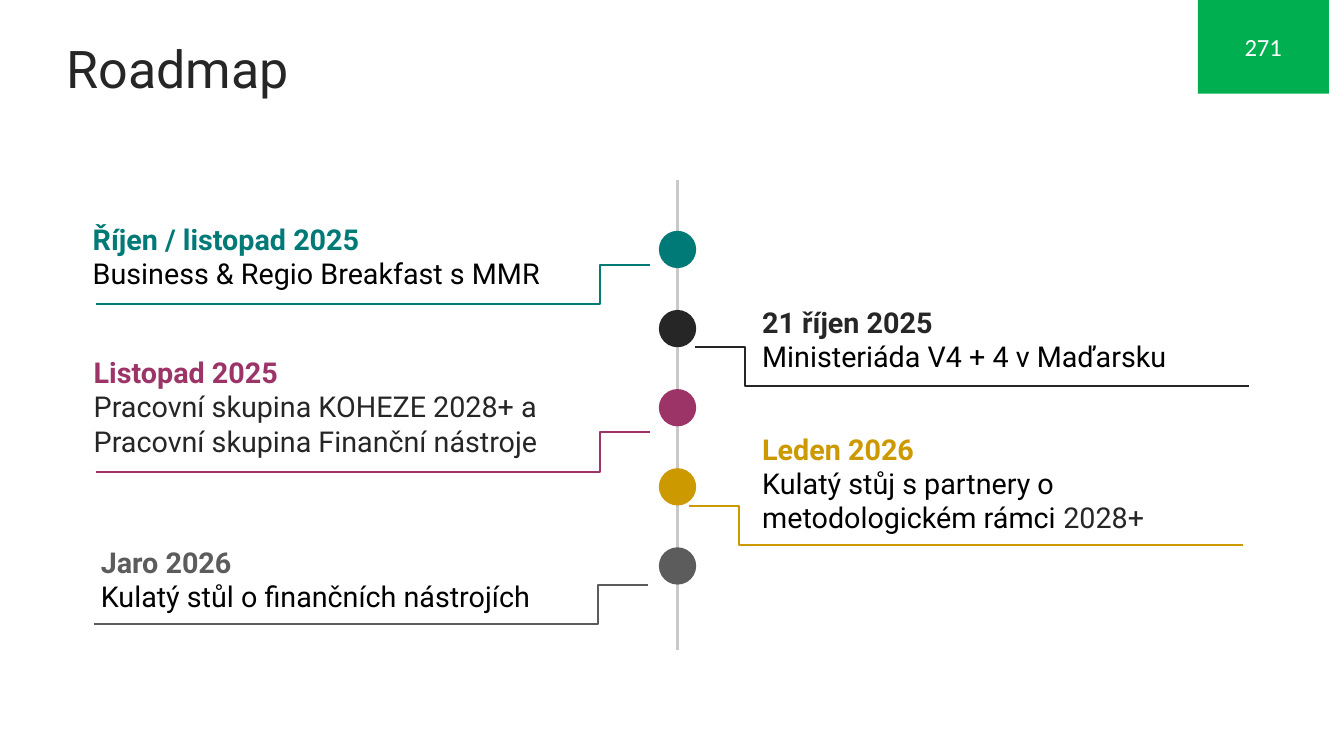
"""Build the Roadmap slide: a vertical timeline with five milestones."""
from lxml.etree import SubElement
from pptx import Presentation
from pptx.dml.color import RGBColor
from pptx.enum.shapes import MSO_CONNECTOR, MSO_SHAPE
from pptx.enum.text import MSO_ANCHOR, PP_ALIGN
from pptx.oxml.ns import qn
from pptx.util import Inches, Pt

TEAL = RGBColor(0x00, 0x7A, 0x77)
INK = RGBColor(0x26, 0x26, 0x26)
PLUM = RGBColor(0x9C, 0x34, 0x68)
GOLD = RGBColor(0xCC, 0x99, 0x00)
GRAY = RGBColor(0x5C, 0x5C, 0x5C)
SILVER = RGBColor(0xC9, 0xC9, 0xC9)
GREEN = RGBColor(0x00, 0xB0, 0x50)
BLACK = RGBColor(0, 0, 0)
WHITE = RGBColor(0xFF, 0xFF, 0xFF)

CELL = Inches(0.1)
AXIS, DOT, TOP, STEP = 67.2, 3.7, 22.9, 7.85
REACH, RISE, BEND = 55, 3.9, 90900

deck = Presentation()
deck.slide_width, deck.slide_height = Inches(13.33), Inches(7.5)
slide = deck.slides.add_slide(deck.slide_layouts[6])
shapes = slide.shapes


def grid(*cells):
    return [round(n * CELL) for n in cells]


def write(para, text, size, color, bold=False, face="Roboto"):
    run = para.add_run()
    run.text = text
    font = run.font
    font.name, font.size, font.bold = face, Pt(size), bold
    font.color.rgb = color


title = shapes.add_textbox(*grid(1.8, 0, 130, 13.4)).text_frame
title.word_wrap = True
title.vertical_anchor = MSO_ANCHOR.MIDDLE
title.margin_left = Inches(0.48)
write(title.paragraphs[0], "Roadmap", 37.1, INK)

axis = shapes.add_connector(MSO_CONNECTOR.STRAIGHT, *grid(AXIS, 17.9, AXIS, 64.5))
axis.line.color.rgb, axis.line.width = SILVER, Pt(2.25)
SubElement(axis.element.spPr, qn("a:effectLst"))

# Each row: color, text box, start of the elbow, direction, heading, runs
steps = [
    (TEAL, (9.2, 22, 49.7, 6.9), (9.5, 30.2), 1, "Říjen / listopad 2025",
     [("Business & Regio Breakfast s MMR", BLACK)]),
    (INK, (75.6, 30.2, 55, 6.9), (123.9, 38.3), -1, "21 říjen 2025",
     [("Ministeriáda V4 + 4 v Maďarsku", BLACK)]),
    (PLUM, (9.3, 35.2, 50.4, 13.8), (9.5, 46.8), 1, "Listopad 2025",
     [("Pracovní skupina KOHEZE 2028+ a Pracovní skupina Finanční nástroje", INK)]),
    (GOLD, (75.6, 42.8, 49.7, 10.4), (123.3, 54.1), -1, "Leden 2026",
     [("Kulatý stůj s partnery o metodologickém rámci ", BLACK), ("2028+", INK)]),
    (GRAY, (10, 54, 49.7, 6.9), (9.3, 61.9), 1, "Jaro 2026",
     [("Kulatý stůl o finančních nástrojích", BLACK)]),
]

for row, (color, box, (x, y), side, head, runs) in enumerate(steps):
    elbow = shapes.add_connector(
        MSO_CONNECTOR.ELBOW, *grid(x, y, x + side * REACH, y - RISE))
    elbow.line.color.rgb, elbow.line.width = color, Pt(1.5)
    props = elbow.element.spPr
    SubElement(props, qn("a:effectLst"))
    SubElement(props.find(".//" + qn("a:avLst")), qn("a:gd"),
               name="adj1", fmla=f"val {BEND}")

    dot = shapes.add_shape(
        MSO_SHAPE.OVAL, *grid(AXIS - DOT / 2, TOP + row * STEP, DOT, DOT))
    dot.shadow.inherit = False
    dot.fill.solid()
    dot.fill.fore_color.rgb = color
    dot.line.fill.background()

    frame = shapes.add_textbox(*grid(*box)).text_frame
    frame.word_wrap = True
    frame.margin_left = frame.margin_right = 0
    frame.margin_top = frame.margin_bottom = 0
    write(frame.paragraphs[0], head, 20.5, color, True)
    body = frame.add_paragraph()
    for text, tint in runs:
        write(body, text, 20.5, tint)

badge = shapes.add_shape(MSO_SHAPE.RECTANGLE, *grid(118.8, 0, 13, 9.3))
badge.shadow.inherit = False
badge.fill.solid()
badge.fill.fore_color.rgb = GREEN
badge.line.fill.background()
label = badge.text_frame
label.vertical_anchor = MSO_ANCHOR.MIDDLE
label.paragraphs[0].alignment = PP_ALIGN.CENTER
write(label.paragraphs[0], "271", 17.6, WHITE, face="Calibri")

deck.save("out.pptx")
